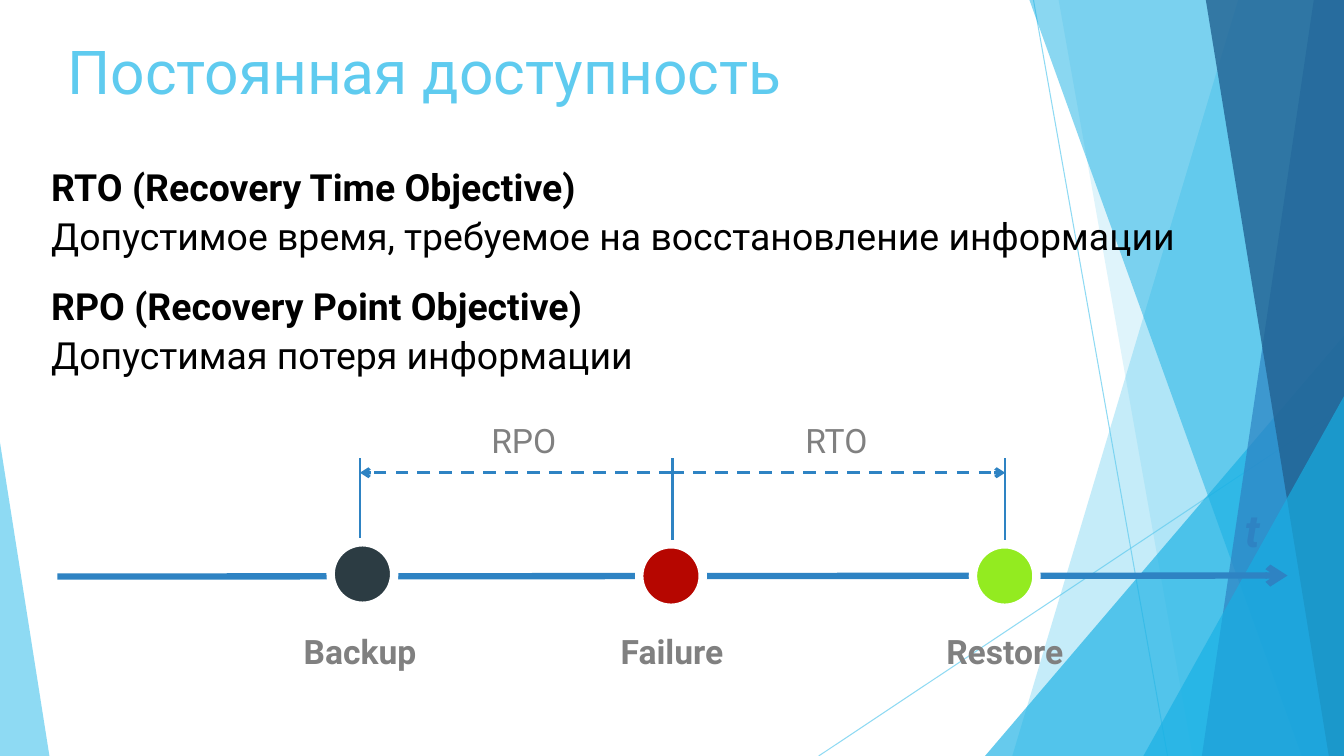
import pptx
import pptx.util
import pptx.dml.color
import pptx.enum.dml
import pptx.enum.shapes
import pptx.enum.text
import pptx.oxml
import pptx.oxml.ns

EMU_PER_PX = 9144  # 100 px to the inch
WIDTH, HEIGHT = 1333, 750
COLORS = {
    "sky": "5FCBEF", "cyan": "17B0E4", "blue": "2E83C3", "navy": "226292",
    "slate": "2C3C43", "red": "B60600", "green": "93EB20",
    "gray": "808080", "black": "000000", "white": "FFFFFF",
}
SHAPE = pptx.enum.shapes.MSO_SHAPE
ALIGN = pptx.enum.text.PP_ALIGN
ANCHOR = pptx.enum.text.MSO_ANCHOR
DASH = pptx.enum.dml.MSO_LINE


def px(length):
    return pptx.util.Emu(length * EMU_PER_PX)


def apply(target, values):
    for name, value in values.items():
        setattr(target, name, value)


class SlideBuilder:
    font_name = "Roboto"

    def __init__(self, slide):
        self.slide = slide

    def paint(self, color_format, color, alpha=100):
        color_format.rgb = pptx.dml.color.RGBColor.from_string(COLORS[color])
        if alpha < 100:
            element = color_format._xFill.find(pptx.oxml.ns.qn("a:srgbClr"))
            opacity = pptx.oxml.parse_xml(
                f'<a:alpha {pptx.oxml.ns.nsdecls("a")} val="{alpha * 1000}"/>')
            element.append(opacity)

    def finish(self, shape, color, alpha=100, outline=None, outline_width=0):
        shape.shadow.inherit = False
        shape.fill.solid()
        self.paint(shape.fill.fore_color, color, alpha)
        if outline:
            shape.line.fill.solid()
            self.paint(shape.line.fill.fore_color, outline)
            shape.line.width = pptx.util.Pt(outline_width)
        else:
            shape.line.fill.background()

    def preset(self, kind, box, color, adjustment=None, **style):
        shape = self.slide.shapes.add_shape(kind, *map(px, box))
        if adjustment is not None:
            shape.adjustments[0] = adjustment
        self.finish(shape, color, **style)

    def polygon(self, points, color, alpha):
        builder = self.slide.shapes.build_freeform(*points[0], scale=EMU_PER_PX)
        builder.add_line_segments(points[1:], close=True)
        self.finish(builder.convert_to_shape(), color, alpha)

    def line(self, start, end, color, width, alpha=100, dash=None, arrow=False):
        connector = self.slide.shapes.add_connector(
            pptx.enum.shapes.MSO_CONNECTOR.STRAIGHT, *map(px, start + end))
        connector.line.fill.solid()
        self.paint(connector.line.fill.fore_color, color, alpha)
        connector.line.width = pptx.util.Pt(width)
        if dash:
            connector.line.dash_style = dash
        namespace = pptx.oxml.ns.nsdecls("a")
        if arrow:
            connector.line._get_or_add_ln().append(
                pptx.oxml.parse_xml(f'<a:tailEnd {namespace} type="arrow"/>'))
        connector._element.spPr.append(
            pptx.oxml.parse_xml(f"<a:effectLst {namespace}/>"))

    def add_text(self, paragraph, text, size, color, paragraph_format, **font_format):
        apply(paragraph, paragraph_format)
        run = paragraph.add_run()
        run.text = text
        apply(run.font, {"name": self.font_name, "size": pptx.util.Pt(size), **font_format})
        self.paint(run.font.color, color)

    def title(self, text, box):
        shape = self.slide.shapes.title
        apply(shape, dict(zip(("left", "top", "width", "height"), map(px, box))))
        apply(shape.text_frame, {
            "auto_size": pptx.enum.text.MSO_AUTO_SIZE.NONE,
            "vertical_anchor": ANCHOR.BOTTOM, "margin_bottom": 0})
        self.add_text(shape.text_frame.paragraphs[0], text, 43.2, "sky",
                      {"alignment": ALIGN.LEFT})

    def text_frame(self, box, **frame_format):
        frame = self.slide.shapes.add_textbox(*map(px, box)).text_frame
        apply(frame, {"word_wrap": True, "vertical_anchor": ANCHOR.TOP, **frame_format})
        return frame

    def label(self, text, box, size=24, color="gray", **font_format):
        frame = self.text_frame(box, margin_left=0, margin_top=0,
                                margin_right=0, margin_bottom=0)
        self.add_text(frame.paragraphs[0], text, size, color,
                      {"alignment": ALIGN.CENTER}, **font_format)

    def definition(self, term, meaning, box):
        frame = self.text_frame(box)
        spacing = {"line_spacing": 0.9, "space_before": pptx.util.Pt(6)}
        self.add_text(frame.paragraphs[0], term, 26.7, "black", spacing, bold=True)
        self.add_text(frame.add_paragraph(), meaning, 26.7, "black", spacing, bold=False)


def draw_background(builder):
    def band(top_left, bottom_left, color, alpha):
        builder.polygon([(top_left, 0), (WIDTH, 0), (WIDTH, HEIGHT),
                         (bottom_left, HEIGHT)], color, alpha)

    def triangle(left, top, width, apex, color, alpha):
        builder.preset(SHAPE.ISOSCELES_TRIANGLE, (left, top, width, HEIGHT - top),
                       color, adjustment=apex, alpha=alpha)

    builder.line((1025, 0), (1158, HEIGHT), "sky", 0.75, alpha=70)
    builder.line((WIDTH, 403), (812, HEIGHT), "sky", 0.75, alpha=70)
    band(1228, 1004, "sky", 36)
    band(1050, 1183, "sky", 20)
    triangle(977, 333, 356, 1, "cyan", 66)
    band(1021, 1291, "cyan", 50)
    band(1303, 1192, "blue", 70)
    band(1196, 1318, "navy", 80)
    triangle(1134, 393, 199, 1, "cyan", 66)
    triangle(0, 439, 49, 0, "sky", 70)


def draw_timeline(builder):
    # Axis
    builder.line((57, 572), (1277, 571), "blue", 4.5, arrow=True)
    builder.label("t", (1217, 499, 50, 55), size=32, color="blue",
                  bold=True, italic=True)

    # Events: name, marker line x, circle left and top, label left and width, colour
    events = [
        ("Backup", 357, 328, 538, 266, 182, "slate"),
        ("Failure", 667, 634, 540, 582, 169, "red"),
        ("Restore", 997, 965, 540, 912, 169, "green"),
    ]
    for _, x, *_ in events:
        builder.line((x, 574), (x, 454), "blue", 1.5)
    for name, _, left, top, label_left, label_width, color in events:
        builder.preset(SHAPE.OVAL, (left, top, 63, 63), color,
                       outline="white", outline_width=6)
        builder.label(name, (label_left, 626, label_width, 70), bold=True)

    # Intervals measured from the failure
    for name, end, label_left in (("RPO", 357, 435), ("RTO", 997, 745)):
        builder.line((666, 469), (end, 469), "blue", 2.25, dash=DASH.DASH, arrow=True)
        builder.label(name, (label_left, 417, 169, 53))


def main():
    presentation = pptx.Presentation()
    apply(presentation, {"slide_width": px(WIDTH), "slide_height": px(HEIGHT)})
    slide = presentation.slides.add_slide(presentation.slide_layouts[5])
    builder = SlideBuilder(slide)

    draw_background(builder)
    builder.title("Постоянная доступность", (57, 25, 1220, 81))
    draw_timeline(builder)

    # Definitions
    builder.definition("RTO (Recovery Time Objective)",
                       "Допустимое время, требуемое на восстановление информации",
                       (41, 163, 1241, 103))
    builder.definition("RPO (Recovery Point Objective)",
                       "Допустимая потеря информации", (41, 281, 987, 103))

    presentation.save("out.pptx")


if __name__ == "__main__":
    main()
